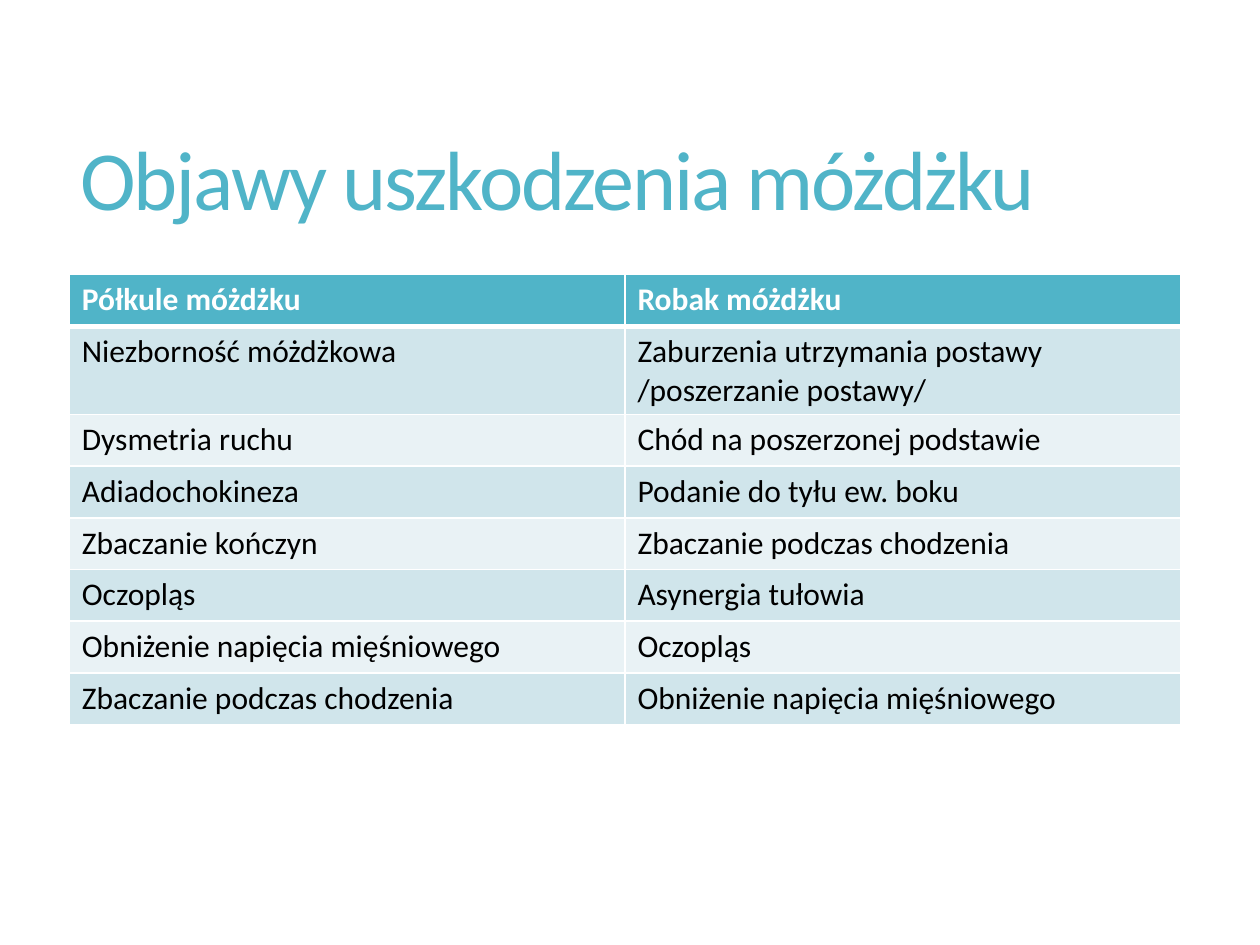
from typing import NamedTuple

from lxml.etree import SubElement
from pptx import Presentation
from pptx.dml.color import RGBColor
from pptx.enum.text import MSO_ANCHOR
from pptx.oxml.ns import qn
from pptx.util import Inches, Pt

FONT = "Calibri"
TEAL, WHITE, BLACK = "50B4C8", "FFFFFF", "000000"
BANDS = ("D0E5EB", "E9F2F5")


class TextStyle(NamedTuple):
    size: float
    color: str
    bold: bool = False


class SymptomRow(NamedTuple):
    hemispheres: str
    vermis: str


TITLE_STYLE = TextStyle(48, TEAL)
HEADER_STYLE = TextStyle(18, WHITE, True)
BODY_STYLE = TextStyle(18, BLACK)

ROWS = [
    SymptomRow("Półkule móżdżku", "Robak móżdżku"),
    SymptomRow("Niezborność móżdżkowa", "Zaburzenia utrzymania postawy /poszerzanie postawy/"),
    SymptomRow("Dysmetria ruchu", "Chód na poszerzonej podstawie"),
    SymptomRow("Adiadochokineza", "Podanie do tyłu ew. boku"),
    SymptomRow("Zbaczanie kończyn", "Zbaczanie podczas chodzenia"),
    SymptomRow("Oczopląs", "Asynergia tułowia"),
    SymptomRow("Obniżenie napięcia mięśniowego", "Oczopląs"),
    SymptomRow("Zbaczanie podczas chodzenia", "Obniżenie napięcia mięśniowego"),
]


def color(value: str) -> RGBColor:
    return RGBColor.from_string(value)


def add_run(paragraph, text: str, style: TextStyle):
    run = paragraph.add_run()
    run.text = text
    run.font.name = FONT
    run.font.size = Pt(style.size)
    run.font.bold = style.bold
    run.font.color.rgb = color(style.color)
    return run


def set_borders(cell, top: float, bottom: float) -> None:
    """Draw white borders; the line elements precede the cell fill."""
    properties = cell._tc.get_or_add_tcPr()
    widths = {"a:lnL": 1, "a:lnR": 1, "a:lnT": top, "a:lnB": bottom}
    for position, (tag, width) in enumerate(widths.items()):
        line = SubElement(properties, qn(tag), w=str(Pt(width)))
        fill = SubElement(line, qn("a:solidFill"))
        SubElement(fill, qn("a:srgbClr"), val=WHITE)
        properties.insert(position, line)


def add_title(slide, text: str) -> None:
    box = slide.shapes.add_textbox(Inches(0.54), Inches(0.55), Inches(8.84), Inches(1.81))
    frame = box.text_frame
    frame.word_wrap = True
    frame.vertical_anchor = MSO_ANCHOR.MIDDLE
    paragraph = frame.paragraphs[0]
    paragraph.line_spacing = 0.9
    run = add_run(paragraph, text, TITLE_STYLE)
    run.font._element.set("spc", "-120")  # tightened letter spacing


def add_symptom_table(slide, rows: list[SymptomRow]) -> None:
    row_height = Inches(0.41)
    table = slide.shapes.add_table(
        len(rows), 2, Inches(0.55), Inches(2.18), Inches(8.82), row_height * len(rows)
    ).table
    for column in table.columns:
        column.width = Inches(4.41)
    for row_index, row in enumerate(rows):
        is_header = row_index == 0
        table.rows[row_index].height = row_height
        for column_index, text in enumerate(row):
            cell = table.cell(row_index, column_index)
            cell.fill.solid()
            cell.fill.fore_color.rgb = color(TEAL if is_header else BANDS[(row_index - 1) % 2])
            # Heavy rule between the header and the body
            set_borders(cell, top=3 if row_index == 1 else 1, bottom=3 if is_header else 1)
            style = HEADER_STYLE if is_header else BODY_STYLE
            add_run(cell.text_frame.paragraphs[0], text, style)


def main() -> None:
    presentation = Presentation()
    presentation.slide_width = Inches(10)
    presentation.slide_height = Inches(7.5)
    slide = presentation.slides.add_slide(presentation.slide_layouts[6])

    # Title
    add_title(slide, "Objawy uszkodzenia móżdżku")

    # Symptoms by damaged part
    add_symptom_table(slide, ROWS)

    presentation.save("out.pptx")


if __name__ == "__main__":
    main()
